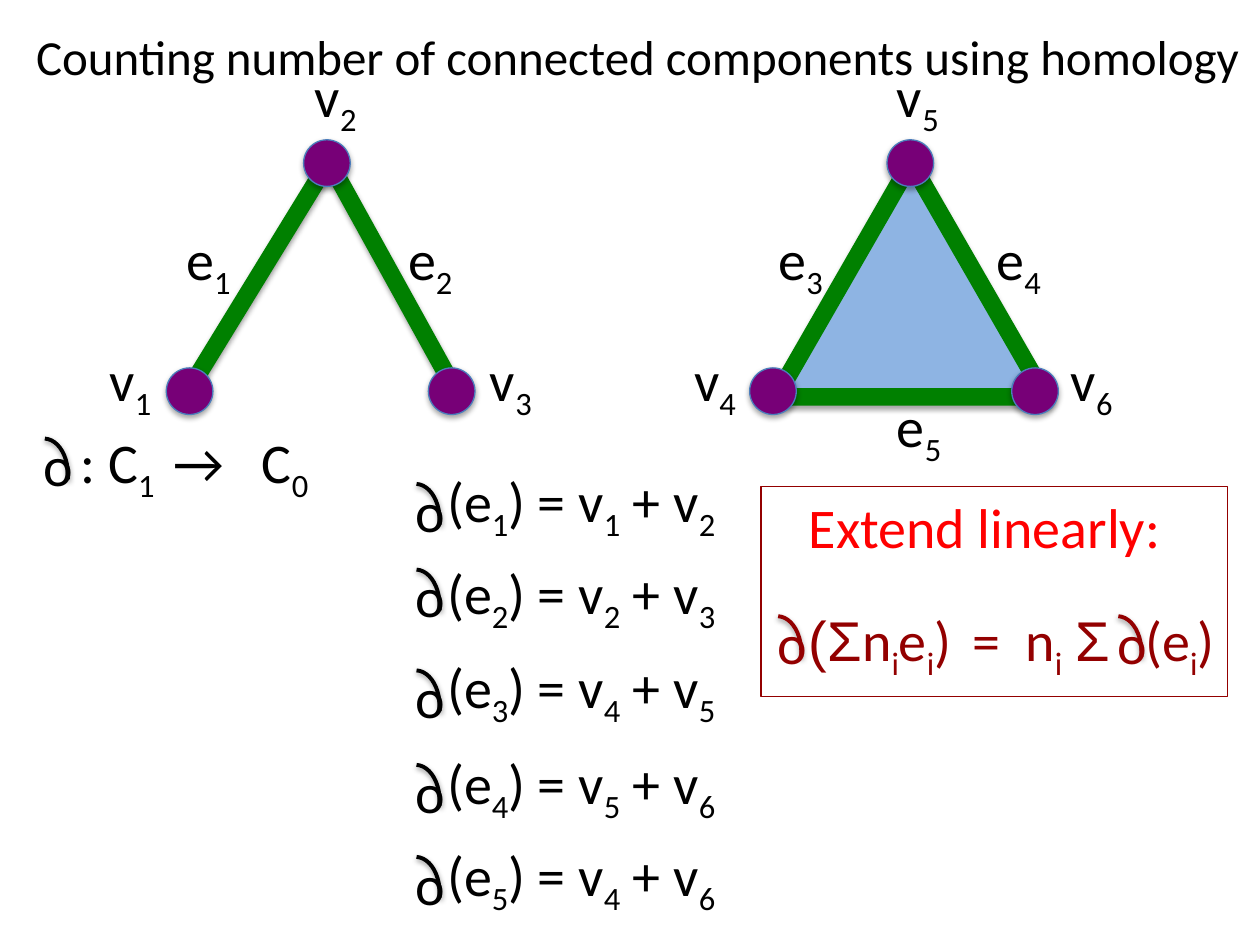
from dataclasses import dataclass

from lxml import etree
from pptx import Presentation
from pptx import util as u
from pptx.dml.color import RGBColor
from pptx.enum import shapes, text
from pptx.oxml import ns, parse_xml

COLOURS = {
    "ink": "000000", "edge": "008000", "face": "8EB4E3", "vertex": "770077",
    "vertex_rim": "4B7EBC", "heading": "FF0000", "rule": "930000",
}
BODY, SYMBOL = "Calibri", "Arial"
FRAME_FORMAT = {
    "word_wrap": True,
    "vertical_anchor": text.MSO_ANCHOR.TOP,
    "auto_size": text.MSO_AUTO_SIZE.SHAPE_TO_FIT_TEXT,
}
LABEL_WIDTH, LINE_HEIGHT = 0.71, 0.64
VERTEX_SIZE = 0.37
VERTEX_OFFSETS = [(0, 1.81), (2.08, 1.81), (1.09, 0)]
VERTEX_TOP = 1.11


@dataclass
class Span:
    """Text in one font; an underscore lowers the character after it."""
    words: str
    font: str = BODY


@dataclass
class Label:
    words: str
    left: float
    top: float


@dataclass
class Boundary:
    edge: int
    start: int
    end: int
    top: float
    arc_top: float


LEFT_LABELS = [
    Label("v_1", 0.77, 2.69), Label("v_2", 2.4, 0.44), Label("v_3", 3.79, 2.69),
    Label("e_1", 1.38, 1.73), Label("e_2", 3.14, 1.73),
]
RIGHT_LABELS = [
    Label("v_6", 8.4, 2.69), Label("v_4", 5.41, 2.69), Label("v_5", 7.02, 0.44),
    Label("e_3", 6.08, 1.73), Label("e_5", 7.02, 3.06), Label("e_4", 7.81, 1.73),
]
BOUNDARIES = [
    Boundary(1, 1, 2, 3.65, 3.84),
    Boundary(2, 2, 3, 4.38, 4.52),
    Boundary(3, 4, 5, 5.13, 5.32),
    Boundary(4, 5, 6, 5.89, 6.07),
    Boundary(5, 4, 6, 6.62, 6.8),
]


def rgb(name: str) -> RGBColor:
    return RGBColor.from_string(COLOURS[name])


def add_shadow(shape, alpha: int, distance: float) -> None:
    """Call after fill and line are set, as effects follow them."""
    shape._element.spPr.append(parse_xml(
        f'<a:effectLst {ns.nsdecls("a")}>'
        f'<a:outerShdw blurRad="{u.Pt(3.1)}" dist="{u.Pt(distance)}" dir="5400000"'
        f' rotWithShape="0"><a:srgbClr val="{COLOURS["ink"]}">'
        f'<a:alpha val="{alpha * 1000}"/></a:srgbClr></a:outerShdw></a:effectLst>'))


def set_line(shape, colour: str, width: float) -> None:
    shape.line.color.rgb = rgb(colour)
    shape.line.width = u.Pt(width)


def add_outline(slide, kind, box: tuple, colour: str, width: float, fill: str = ""):
    shape = slide.shapes.add_shape(kind, *map(u.Inches, box))
    if fill:
        shape.fill.solid()
        shape.fill.fore_color.rgb = rgb(fill)
    else:
        shape.fill.background()
    set_line(shape, colour, width)
    return shape


def format_frame(frame) -> None:
    for name, value in FRAME_FORMAT.items():
        setattr(frame, name, value)


def add_run(paragraph, words: str, font: str, size: float, colour: str, lowered=False) -> None:
    if not words:
        return
    run = paragraph.add_run()
    run.text = words
    for name, value in {"name": font, "size": u.Pt(size)}.items():
        setattr(run.font, name, value)
    run.font.color.rgb = rgb(colour)
    if lowered:
        run.font._element.set("baseline", "-25000")


def add_formula(slide, spans: list[Span], left: float, top: float, width: float,
                colour: str = "ink", tabs: tuple = ()) -> None:
    box = slide.shapes.add_textbox(*map(u.Inches, (left, top, width, LINE_HEIGHT)))
    format_frame(box.text_frame)
    paragraph = box.text_frame.paragraphs[0]
    if tabs:
        stops = etree.SubElement(paragraph._p.get_or_add_pPr(), ns.qn("a:tabLst"))
        for stop in tabs:
            etree.SubElement(stops, ns.qn("a:tab"), pos=str(u.Inches(stop)), algn="l")
    for span in spans:
        first, *rest = span.words.split("_")
        add_run(paragraph, first, span.font, 32, colour)
        for piece in rest:
            add_run(paragraph, piece[0], span.font, 32, colour, lowered=True)
            add_run(paragraph, piece[1:], span.font, 32, colour)


def add_boundary_sign(slide, left: float, top: float, colour: str = "ink") -> None:
    """Draw the boundary operator as an arc over a letter o."""
    arc = add_outline(slide, shapes.MSO_SHAPE.ARC, (left, top, 0.41, 0.62), colour, 2.25)
    arc.rotation = 4
    add_shadow(arc, 38, 1.6)
    add_formula(slide, [Span("o")], left + 0.12, top - 0.11, 0.65, colour)


def add_vertices(slide, left: float) -> None:
    for dx, dy in VERTEX_OFFSETS:
        box = (left + dx, VERTEX_TOP + dy, VERTEX_SIZE, VERTEX_SIZE)
        add_shadow(add_outline(slide, shapes.MSO_SHAPE.OVAL, box, "vertex_rim", 0.75, "vertex"),
                   35, 1.8)


def add_labels(slide, labels: list[Label]) -> None:
    for label in labels:
        add_formula(slide, [Span(label.words)], label.left, label.top, LABEL_WIDTH)


def add_title(slide, words: str) -> None:
    title = slide.shapes.title
    for name, value in zip(("left", "top", "width", "height"), (0.12, 0.16, 9.88, 0.57)):
        setattr(title, name, u.Inches(value))
    format_frame(title.text_frame)
    paragraph = title.text_frame.paragraphs[0]
    paragraph.alignment = text.PP_ALIGN.CENTER
    add_run(paragraph, words, BODY, 28, "ink")


def add_filled_triangle(slide) -> None:
    face = add_outline(slide, shapes.MSO_SHAPE.ISOSCELES_TRIANGLE,
                       (6.16, 1.29, 2.14, 1.86), "edge", 10, "face")
    add_shadow(face, 35, 1.8)
    add_vertices(slide, 5.95)
    add_labels(slide, RIGHT_LABELS)


def add_open_path(slide) -> None:
    apex = (2.61, 1.28)
    for foot in ((3.61, 3.09), (1.5, 3.09)):
        edge = slide.shapes.add_connector(
            shapes.MSO_CONNECTOR.STRAIGHT, *map(u.Inches, apex + foot))
        set_line(edge, "edge", 10)
        add_shadow(edge, 38, 1.6)
    add_vertices(slide, 1.32)
    add_labels(slide, LEFT_LABELS)


def add_linear_rule(slide) -> None:
    add_formula(slide, [Span("Extend linearly:")], 6.32, 3.86, 3.67, "heading")
    linear_rule = [Span("(Σ", SYMBOL), Span("n_ie_i)\t=\tn_i "), Span("Σ", SYMBOL),
                   Span("\t(e_i)")]
    add_formula(slide, linear_rule, 6.32, 4.76, 3.49, "rule", tabs=(1.3, 1.72, 2.67))
    for left in (8.65, 5.95):
        add_boundary_sign(slide, left, 4.89, "rule")
    frame = add_outline(slide, shapes.MSO_SHAPE.RECTANGLE, (6.04, 3.86, 3.7, 1.67), "rule", 0.75)
    frame.shadow.inherit = False


def main() -> None:
    deck = Presentation()
    deck.slide_width, deck.slide_height = u.Inches(10), u.Inches(7.5)
    slide = deck.slides.add_slide(deck.slide_layouts[5])

    add_title(slide, "Counting number of connected components using homology")
    add_filled_triangle(slide)
    add_open_path(slide)
    add_formula(slide, [Span(": C_1\t→\tC_0")], 0.54, 3.34, 2.22, tabs=(0.74, 1.44))
    add_boundary_sign(slide, 0.13, 3.48)
    for row in BOUNDARIES:
        add_boundary_sign(slide, 3.08, row.arc_top)
        add_formula(slide, [Span(f"(e_{row.edge}) = v_{row.start} + v_{row.end}")],
                    3.45, row.top, 3.42)
    add_linear_rule(slide)
    deck.save("out.pptx")


if __name__ == "__main__":
    main()
